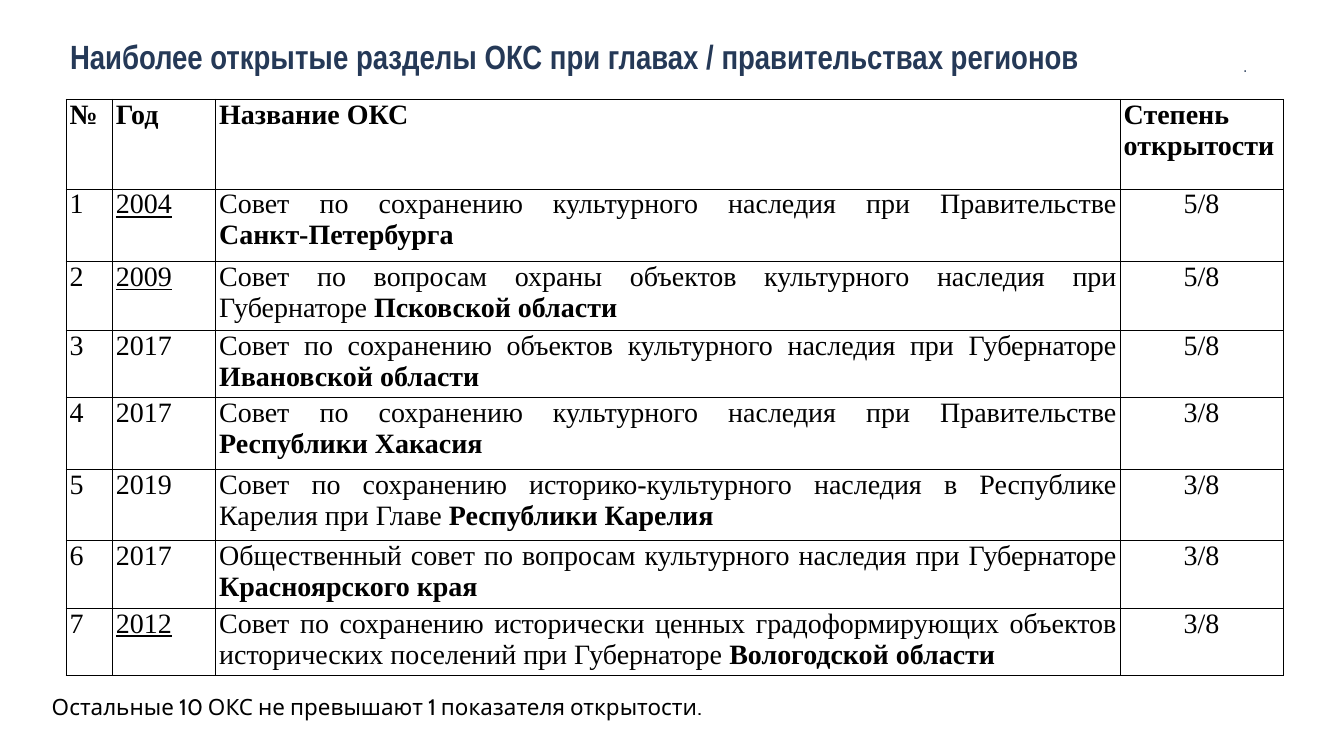
import pptx
import pptx.dml.color
import pptx.enum.text
import pptx.oxml
import pptx.oxml.ns
import pptx.util

Inches = pptx.util.Inches
Align = pptx.enum.text.PP_ALIGN
Anchor = pptx.enum.text.MSO_ANCHOR
NAVY = pptx.dml.color.RGBColor(0x25, 0x39, 0x57)
BLACK = pptx.dml.color.RGBColor(0, 0, 0)


def add_text(para, text, font="Times New Roman", size=40, color=BLACK,
             bold=False, underline=False, align=Align.JUSTIFY):
    para.alignment = align
    span = para.add_run()
    span.text = text
    span.font.name = font
    span.font.size = pptx.util.Pt(size)
    span.font.color.rgb = color
    span.font.bold = bold
    span.font.underline = underline


def add_box(left, top, width, height, anchor, inset_x=0.08, inset_y=0.08):
    box = page.shapes.add_textbox(Inches(left), Inches(top), Inches(width), Inches(height))
    frame = box.text_frame
    frame.word_wrap = True
    frame.vertical_anchor = anchor
    frame.margin_left = frame.margin_right = Inches(inset_x)
    frame.margin_top = frame.margin_bottom = Inches(inset_y)
    return frame


deck = pptx.Presentation()
deck.slide_width = Inches(26.67)
deck.slide_height = Inches(15)
page = deck.slides.add_slide(deck.slide_layouts[6])

# Title and the small dot at its right
title = add_box(1.31, 0.57, 24.78, 1.02, Anchor.BOTTOM).paragraphs[0]
title.space_after = pptx.util.Pt(24)
add_text(title, "Наиболее открытые разделы ОКС при главах / правительствах регионов",
         font="Arial Narrow", size=48, color=NAVY, bold=True, align=Align.LEFT)
dot = add_box(12.4, 1.03, 12.43, 0.56, Anchor.MIDDLE).paragraphs[0]
add_text(dot, ".", font="Arial Narrow", size=24, color=NAVY, align=Align.RIGHT)

# Table content: year, year underlined, council, region, openness
HEADER = ["№", "Год", "Название ОКС", "Степень открытости"]
COUNCILS = [
    ("2004", True, "Совет по сохранению культурного наследия при Правительстве ",
     "Санкт‑Петербурга", "5/8"),
    ("2009", True, "Совет по вопросам охраны объектов культурного наследия при Губернаторе ",
     "Псковской области", "5/8"),
    ("2017", False, "Совет по сохранению объектов культурного наследия при Губернаторе ",
     "Ивановской области", "5/8"),
    ("2017", False, "Совет по сохранению культурного наследия при Правительстве ",
     "Республики Хакасия", "3/8"),
    ("2019", False, "Совет по сохранению историко-культурного наследия в Республике Карелия при Главе ",
     "Республики Карелия", "3/8"),
    ("2017", False, "Общественный совет по вопросам культурного наследия при Губернаторе ",
     "Красноярского края", "3/8"),
    ("2012", True, "Совет по сохранению исторически ценных градоформирующих объектов "
     "исторических поселений при Губернаторе ", "Вологодской области", "3/8"),
]
COLUMN_WIDTHS = [0.92, 2.05, 17.95, 3.23]
ROW_HEIGHTS = [1.78, 1.44, 1.36, 1.34, 1.42, 1.42, 1.34, 1.32]

table = page.shapes.add_table(
    len(ROW_HEIGHTS), len(COLUMN_WIDTHS), Inches(1.31), Inches(1.97),
    Inches(sum(COLUMN_WIDTHS)), Inches(sum(ROW_HEIGHTS))).table
table.horz_banding = False
for column, width in zip(table.columns, COLUMN_WIDTHS):
    column.width = Inches(width)
for row, height in zip(table.rows, ROW_HEIGHTS):
    row.height = Inches(height)

# Cell margins, thin black borders, no fill
for cell in table.iter_cells():
    cell.margin_left = cell.margin_right = Inches(0.07)
    cell.margin_top = cell.margin_bottom = 0
    properties = cell._tc.get_or_add_tcPr()
    for side in ("lnL", "lnR", "lnT", "lnB"):
        properties.append(pptx.oxml.parse_xml(
            f'<a:{side} {pptx.oxml.ns.nsdecls("a")} w="12700"><a:solidFill>'
            f'<a:srgbClr val="{BLACK}"/></a:solidFill></a:{side}>'))
    cell.fill.background()

# Header row and council rows
for column, heading in enumerate(HEADER):
    add_text(table.cell(0, column).text_frame.paragraphs[0], heading, bold=True)
for number, (year, underlined, council, region, openness) in enumerate(COUNCILS, start=1):
    paras = [cell.text_frame.paragraphs[0] for cell in table.rows[number].cells]
    add_text(paras[0], str(number))
    add_text(paras[1], year, underline=underlined)
    add_text(paras[2], council)
    add_text(paras[2], region, bold=True)
    add_text(paras[3], openness, align=Align.CENTER)

# Note below the table
note = add_box(0.81, 13.71, 13.34, 0.64, Anchor.TOP, inset_x=0.1, inset_y=0.05).paragraphs[0]
add_text(note, "Остальные 10 ОКС не превышают 1 показателя открытости.",
         font="Cabin", size=32, align=Align.CENTER)

deck.save("out.pptx")
